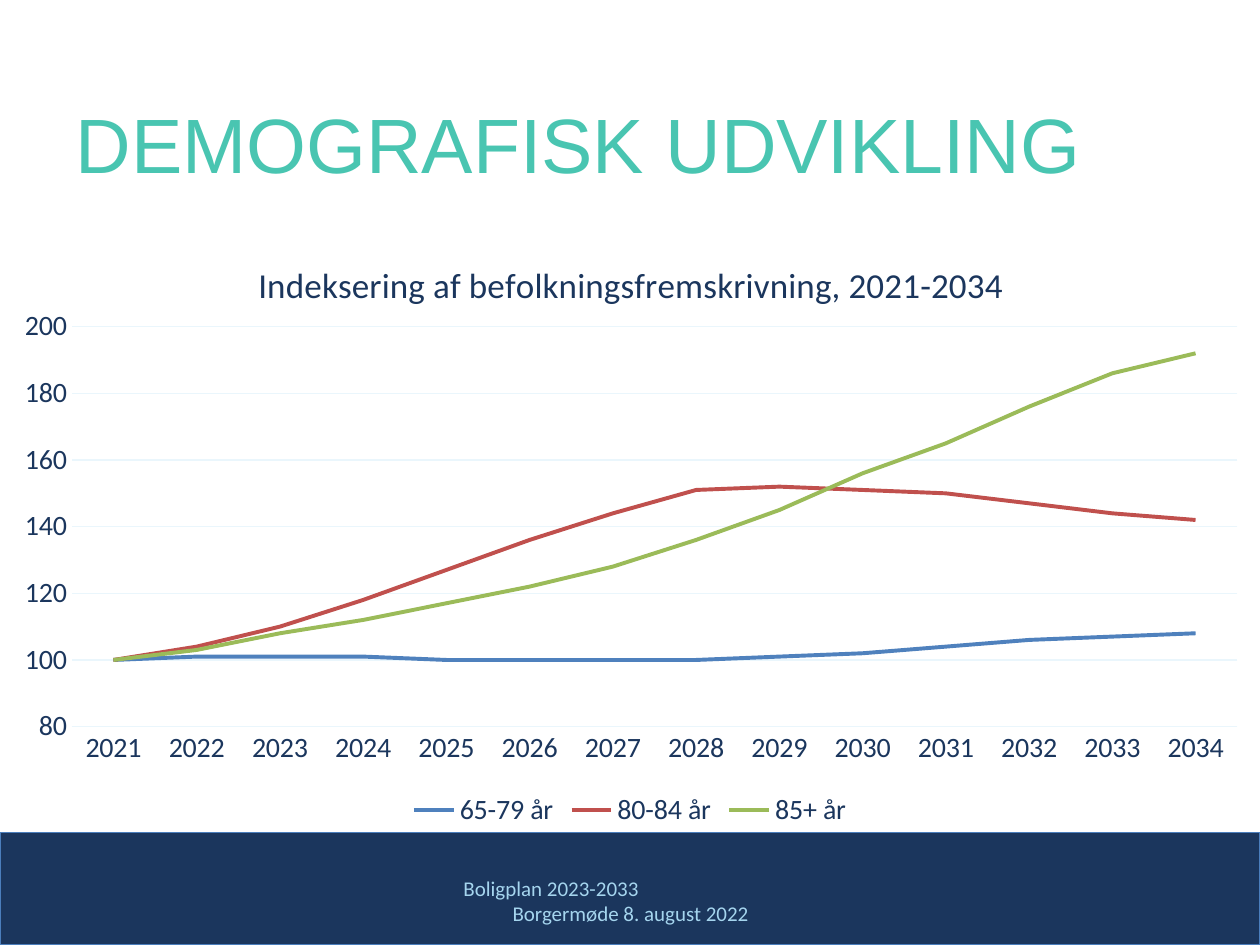
from typing import NamedTuple

from lxml import etree
from pptx import Presentation
from pptx import util as u
from pptx.chart.data import CategoryChartData
from pptx.dml.color import RGBColor
from pptx.enum import chart as ch, shapes, text
from pptx.oxml.ns import qn

NAVY = RGBColor(0x1B, 0x36, 0x5D)
TEAL = RGBColor(0x49, 0xC5, 0xB1)
SKY = RGBColor(0xA5, 0xD5, 0xEE)
PALE = RGBColor(0xEA, 0xF6, 0xFC)
EDGE = RGBColor(0x4B, 0x7E, 0xBC)
BLUE = RGBColor(0x4F, 0x81, 0xBD)
RED = RGBColor(0xC0, 0x50, 0x4D)
GREEN = RGBColor(0x9B, 0xBB, 0x59)

WIDTH, HEIGHT = u.Inches(10), u.Inches(7.5)
BAND_TOP = u.Inches(6.61)
CHART_TOP = u.Inches(1.77)


class AgeGroup(NamedTuple):
    name: str
    color: RGBColor
    index: tuple[int, ...]


YEARS = [str(year) for year in range(2021, 2035)]
AGE_GROUPS = [
    AgeGroup("65-79 år", BLUE,
             (100, 101, 101, 101, 100, 100, 100, 100, 101, 102, 104, 106, 107, 108)),
    AgeGroup("80-84 år", RED,
             (100, 104, 110, 118, 127, 136, 144, 151, 152, 151, 150, 147, 144, 142)),
    AgeGroup("85+ år", GREEN,
             (100, 103, 108, 112, 117, 122, 128, 136, 145, 156, 165, 176, 186, 192)),
]


def style_font(font, size: int, color: RGBColor, name: str = "Calibri") -> None:
    font.size, font.name = u.Pt(size), name
    font.color.rgb = color


def style_line(line, width: float, color: RGBColor) -> None:
    line.width = u.Pt(width)
    line.color.rgb = color


def set_layout(parent, position: int, **values: float | str) -> None:
    """Place a chart part by hand, in shares of the chart's size."""
    for old in parent.findall(qn("c:layout")):
        parent.remove(old)
    layout = etree.Element(qn("c:layout"))
    manual = etree.SubElement(layout, qn("c:manualLayout"))
    for tag, value in values.items():
        etree.SubElement(manual, qn(f"c:{tag}")).set("val", str(value))
    parent.insert(position, layout)


def add_title(slide) -> None:
    sp = slide.shapes.title
    sp.left, sp.top = u.Inches(0.5), u.Inches(0.65)
    sp.width, sp.height = u.Inches(9), u.Inches(0.96)
    tf = sp.text_frame
    tf.vertical_anchor = text.MSO_ANCHOR.MIDDLE
    p = tf.paragraphs[0]
    p.alignment = text.PP_ALIGN.LEFT
    r = p.add_run()
    r.text = "DEMOGRAFISK UDVIKLING"
    style_font(r.font, 44, TEAL, "Arial")


def add_band(slide) -> None:
    sp = slide.shapes.add_shape(shapes.MSO_SHAPE.RECTANGLE,
                                0, BAND_TOP, WIDTH, HEIGHT - BAND_TOP)
    sp.shadow.inherit = False
    sp.fill.solid()
    sp.fill.fore_color.rgb = NAVY
    style_line(sp.line, 0.75, EDGE)


def add_footer(slide) -> None:
    sp = slide.shapes.add_textbox(u.Inches(3.42), u.Inches(6.95),
                                  u.Inches(3.17), u.Inches(0.4))
    tf = sp.text_frame
    tf.word_wrap = True
    tf.vertical_anchor = text.MSO_ANCHOR.MIDDLE
    lines = [("Boligplan 2023-2033", text.PP_ALIGN.LEFT),
             ("Borgermøde 8. august 2022", text.PP_ALIGN.CENTER)]
    for i, (words, alignment) in enumerate(lines):
        p = tf.add_paragraph() if i else tf.paragraphs[0]
        p.alignment = alignment
        r = p.add_run()
        r.text = words
        style_font(r.font, 12, SKY)
    tf.paragraphs[0]._p.get_or_add_pPr().set("marL", str(u.Inches(0.16)))


def add_population_chart(slide) -> None:
    data = CategoryChartData(number_format="0")
    data.categories = YEARS
    for group in AGE_GROUPS:
        data.add_series(group.name, group.index)
    chart = slide.shapes.add_chart(ch.XL_CHART_TYPE.LINE, 0, CHART_TOP, WIDTH,
                                   BAND_TOP - CHART_TOP, data).chart
    style_font(chart.font, 16, NAVY)

    chart.has_title = True
    r = chart.chart_title.text_frame.paragraphs[0].add_run()
    r.text = "Indeksering af befolkningsfremskrivning, 2021-2034"
    style_font(r.font, 20, NAVY)
    r.font.bold = False
    set_layout(chart.chart_title._element, 1, xMode="edge", yMode="edge", x=0.2, y=0.05)

    chart.has_legend = True
    chart.legend.position = ch.XL_LEGEND_POSITION.BOTTOM
    chart.legend.include_in_layout = False
    style_font(chart.legend.font, 16, NAVY)

    years, index = chart.category_axis, chart.value_axis
    for axis in (years, index):
        axis.major_tick_mark = axis.minor_tick_mark = ch.XL_TICK_MARK.NONE
        style_font(axis.tick_labels.font, 16, NAVY)
    style_line(years.format.line, 0.75, PALE)
    index.format.line.fill.background()
    index.minimum_scale, index.maximum_scale, index.major_unit = 80, 200, 20
    index.tick_labels.number_format = "0"
    index.tick_labels.number_format_is_linked = False
    index.has_major_gridlines = True
    style_line(index.major_gridlines.format.line, 0.75, PALE)

    plot = chart.plots[0]
    plot.vary_by_categories = False
    for series, group in zip(plot.series, AGE_GROUPS):
        series.smooth = False
        series.marker.style = ch.XL_MARKER_STYLE.NONE
        style_line(series.format.line, 2.25, group.color)
    set_layout(plot._element.getparent(), 0, layoutTarget="inner", xMode="edge",
               yMode="edge", x=0.057, y=0.17, w=0.925, h=0.656)


def main() -> None:
    prs = Presentation()
    prs.slide_width, prs.slide_height = WIDTH, HEIGHT
    slide = prs.slides.add_slide(prs.slide_layouts[5])
    add_band(slide)
    add_title(slide)
    add_footer(slide)
    add_population_chart(slide)
    prs.save("out.pptx")


if __name__ == "__main__":
    main()
